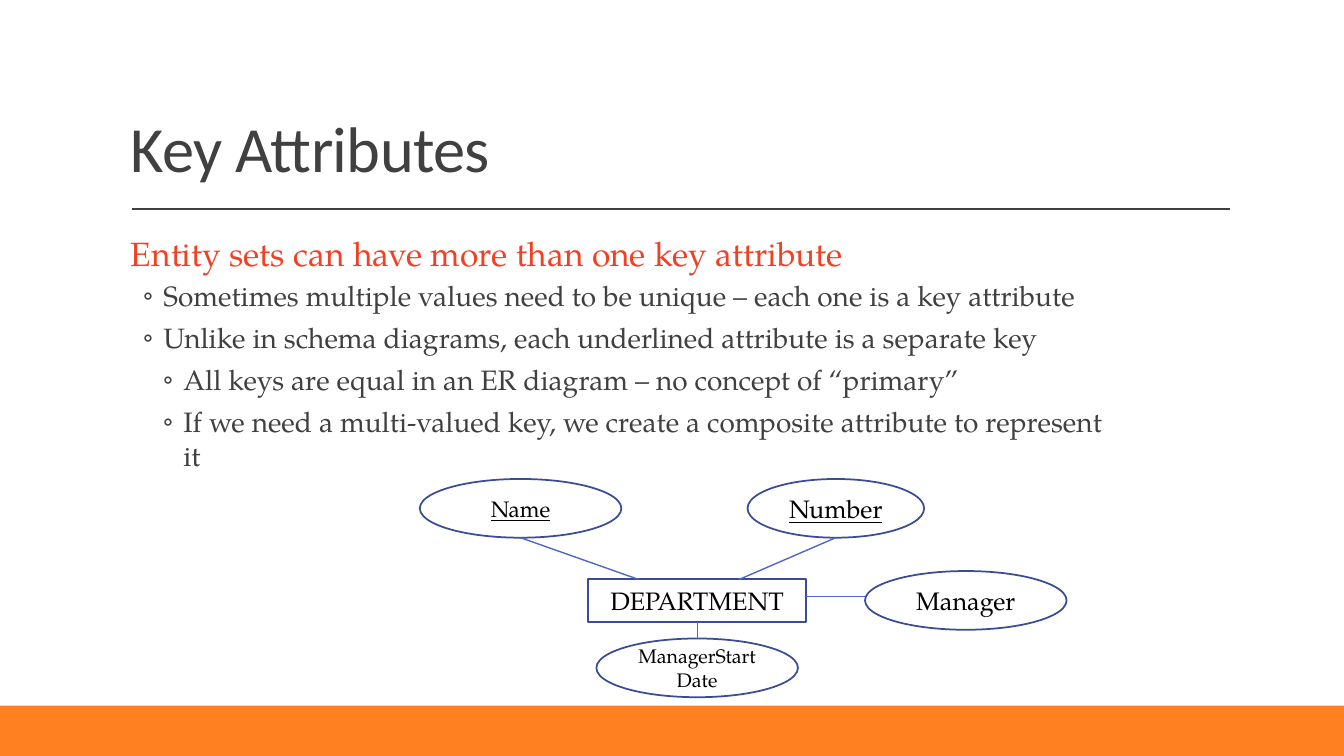
from lxml.etree import SubElement
from pptx import Presentation
from pptx.dml.color import RGBColor
from pptx.enum.shapes import MSO_CONNECTOR as CONNECTOR, MSO_SHAPE as SHAPE
from pptx.enum.text import MSO_ANCHOR as ANCHOR, PP_ALIGN as ALIGN
from pptx.oxml.ns import qn
from pptx.util import Cm, Pt

SERIF = "TeX Gyre Pagella"
GREY, RED, ORANGE = "404040", "F14124", "FF8021"
OUTLINE, LINK = "3A4C94", "4E67C8"

# text, left margin, hanging indent (cm), size, colour, space before, space after, line spacing
HEADING_STYLE = (0.25, 0, 24, RED, 12, 2, 1.1)
POINT_STYLE = (1.07, 0.51, 20, GREY, 2, 4, 1.0)
SUBPOINT_STYLE = (1.57, 0.51, 20, GREY, 2, 4, 1.0)
BODY = [
    ("Entity sets can have more than one key attribute", HEADING_STYLE),
    ("Sometimes multiple values need to be unique – each one is a key attribute", POINT_STYLE),
    ("Unlike in schema diagrams, each underlined attribute is a separate key", POINT_STYLE),
    ("All keys are equal in an ER diagram – no concept of “primary”", SUBPOINT_STYLE),
    ("If we need a multi-valued key, we create a composite attribute to represent it",
     SUBPOINT_STYLE),
]


def color(hex_string):
    return RGBColor.from_string(hex_string)


def set_font(paragraph, name, size, hex_string):
    font = paragraph.font
    font.name, font.size = name, Pt(size)
    font.color.rgb = color(hex_string)


def add_text_frame(slide, left, top, width, height):
    box = slide.shapes.add_textbox(Cm(left), Cm(top), Cm(width), Cm(height))
    box.text_frame.word_wrap = True
    return box.text_frame


def add_title(slide, text):
    frame = add_text_frame(slide, 3.05, 0.79, 27.94, 4.04)
    frame.vertical_anchor = ANCHOR.BOTTOM
    paragraph = frame.paragraphs[0]
    paragraph.line_spacing = 0.9
    run = paragraph.add_run()
    run.text = text
    set_font(paragraph, "Calibri", 46, GREY)
    run.font._element.set("spc", "-50")


def set_indent(paragraph, margin, hanging):
    """Indent the paragraph and, where it hangs, give it a bullet."""
    properties = paragraph._p.get_or_add_pPr()
    properties.set("marL", str(Cm(margin)))
    properties.set("indent", str(-Cm(hanging)))
    if hanging:
        SubElement(properties, qn("a:buFont"), typeface="Calibri")
        SubElement(properties, qn("a:buChar"), char="◦")


def add_body(slide):
    frame = add_text_frame(slide, 3.05, 5.64, 25.32, 11.38)
    frame.margin_left = frame.margin_right = 0
    for index, (text, style) in enumerate(BODY):
        margin, hanging, size, hex_string, before, after, spacing = style
        paragraph = frame.add_paragraph() if index else frame.paragraphs[0]
        paragraph.text = text
        paragraph.space_before, paragraph.space_after = Pt(before), Pt(after)
        paragraph.line_spacing = spacing
        set_indent(paragraph, margin, hanging)
        set_font(paragraph, SERIF, size, hex_string)


def add_shape(slide, kind, left, top, width, height, fill):
    shape = slide.shapes.add_shape(kind, Cm(left), Cm(top), Cm(width), Cm(height))
    shape.shadow.inherit = False
    shape.fill.solid()
    shape.fill.fore_color.rgb = color(fill)
    shape.line.fill.background()
    return shape


def add_node(slide, kind, text, left, top, width, height, size=18, key=False):
    """Add an entity or attribute; a key attribute is underlined."""
    shape = add_shape(slide, kind, left, top, width, height, "FFFFFF")
    shape.line.color.rgb = color(OUTLINE)
    shape.line.width = Pt(1.25)
    frame = shape.text_frame
    frame.word_wrap = True
    frame.vertical_anchor = ANCHOR.MIDDLE
    paragraph = frame.paragraphs[0]
    paragraph.text = text
    paragraph.alignment = ALIGN.CENTER
    set_font(paragraph, SERIF, size, "000000")
    if key:
        paragraph.font.underline = True
    return shape


def add_attribute(slide, text, left, top, width=5.08, size=18, key=False):
    return add_node(slide, SHAPE.OVAL, text, left, top, width, 1.48, size, key)


def add_line(slide, start, end, hex_string=LINK):
    ends = [Cm(value) for value in (*start, *end)]
    connector = slide.shapes.add_connector(CONNECTOR.STRAIGHT, *ends)
    connector.line.color.rgb = color(hex_string)
    connector.line.width = Pt(1)
    SubElement(connector._element.spPr, qn("a:effectLst"))
    return connector


def add_diagram(slide):
    department = add_node(slide, SHAPE.RECTANGLE, "DEPARTMENT", 14.82, 14.6, 5.5, 1.07)
    add_attribute(slide, "Name", 10.58, 12.07, size=16, key=True)
    add_attribute(slide, "Number", 18.84, 12.07, width=4.45, key=True)
    add_line(slide, (13.12, 13.55), (16.09, 14.6))
    add_line(slide, (21.06, 13.55), (18.63, 14.6))
    add_attribute(slide, "Manager", 21.8, 14.39)
    add_line(slide, (20.32, 15.03), (21.8, 15.03))
    start_date = add_attribute(slide, "ManagerStartDate", 15.03, 16.09, size=14)
    link = add_line(slide, (17.57, 16.09), (17.57, 15.67))
    link.begin_connect(start_date, 0)
    link.end_connect(department, 2)


def main():
    presentation = Presentation()
    presentation.slide_width, presentation.slide_height = Cm(33.87), Cm(19.05)
    slide = presentation.slides.add_slide(presentation.slide_layouts[6])
    add_shape(slide, SHAPE.RECTANGLE, 0, 17.78, 33.87, 1.27, ORANGE)
    add_line(slide, (3.33, 5.27), (31, 5.27), GREY)
    add_title(slide, "Key Attributes")
    add_body(slide)
    add_diagram(slide)
    presentation.save("out.pptx")


if __name__ == "__main__":
    main()
